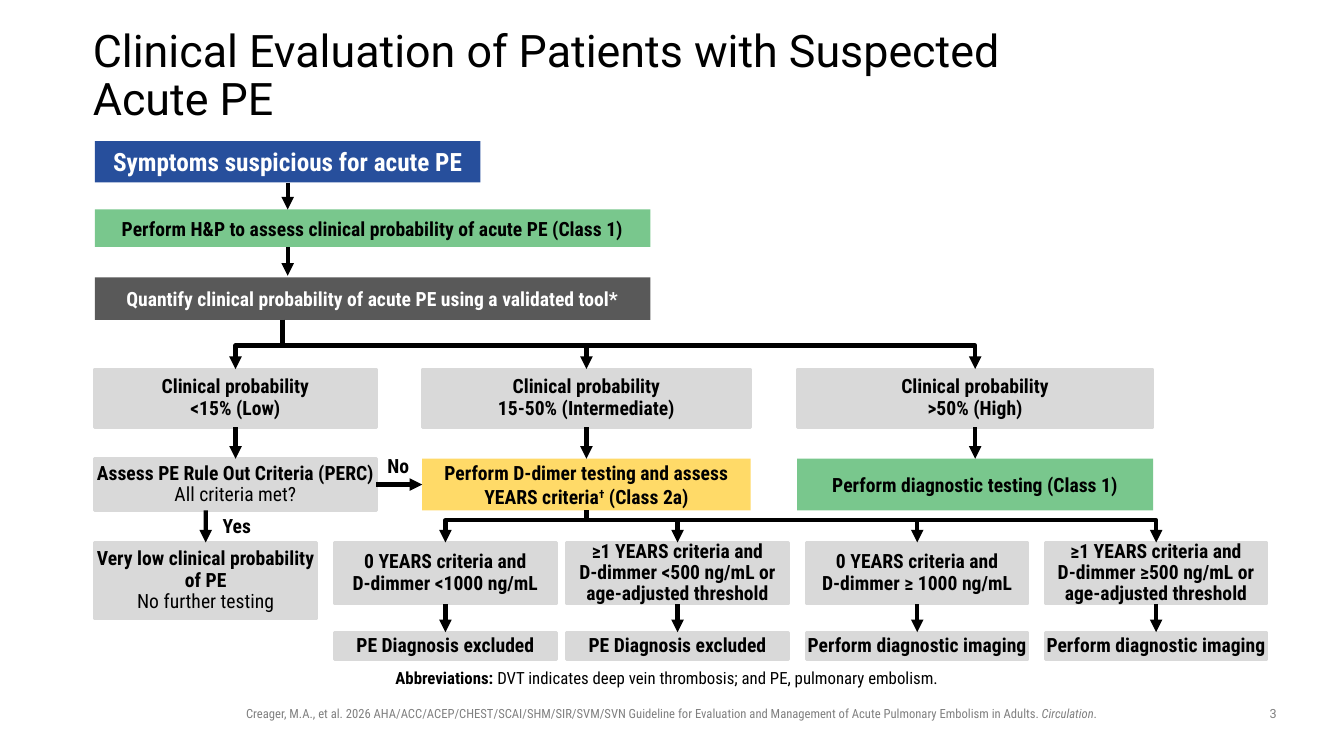
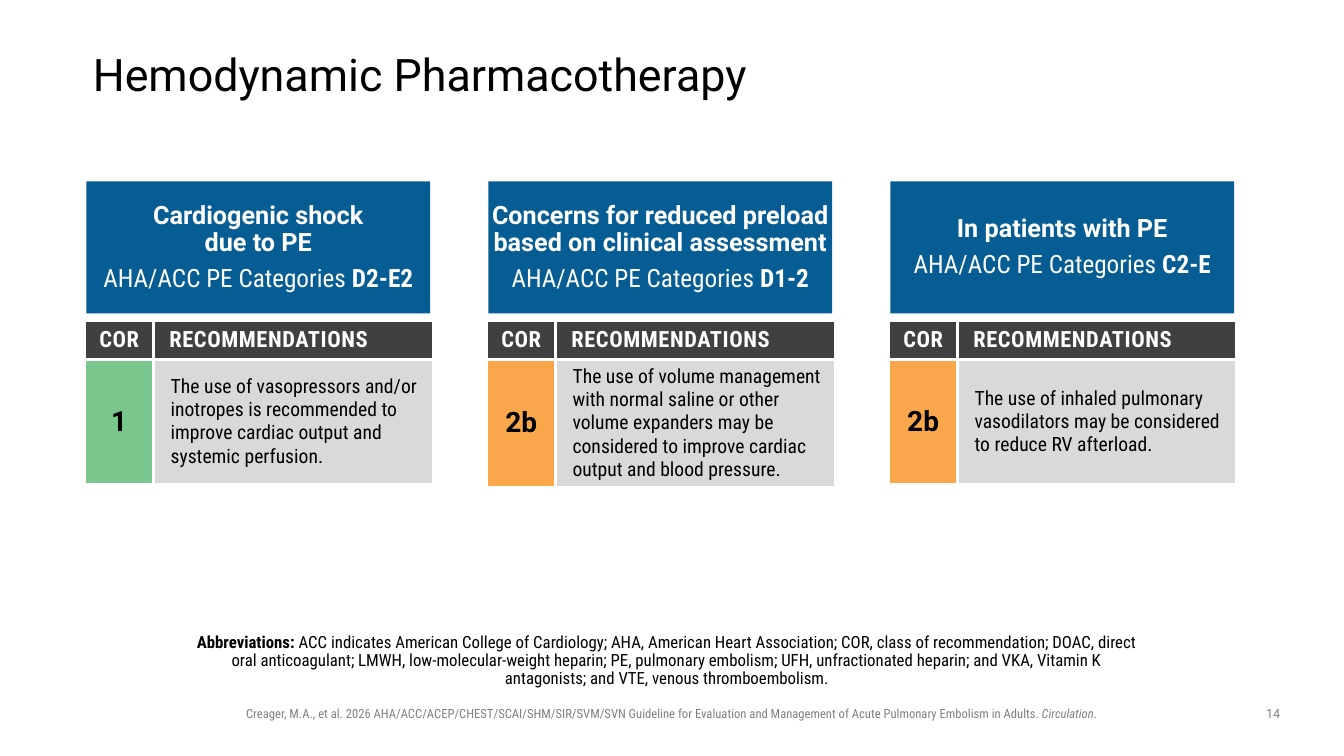
from lxml import etree
from pptx import Presentation
from pptx.dml.color import RGBColor
from pptx.enum.shapes import MSO_CONNECTOR, MSO_SHAPE
from pptx.enum.text import MSO_ANCHOR, PP_ALIGN
from pptx.oxml.ns import qn
from pptx.util import Cm, Pt

RECT = MSO_SHAPE.RECTANGLE
STRAIGHT, ELBOW = MSO_CONNECTOR.STRAIGHT, MSO_CONNECTOR.ELBOW
LEFT, CENTER = PP_ALIGN.LEFT, PP_ALIGN.CENTER
TOP, MIDDLE, BOTTOM = MSO_ANCHOR.TOP, MSO_ANCHOR.MIDDLE, MSO_ANCHOR.BOTTOM
SIDE_TOP, SIDE_LEFT, SIDE_BOTTOM, SIDE_RIGHT = range(4)

HEADING, BODY = "Roboto", "Roboto Condensed"
BLACK, WHITE, FOOTER_GRAY = "000000", "FFFFFF", "808080"
LIGHT_GRAY, DARK_GRAY, HEADER_GRAY = "D9D9D9", "595959", "404040"
ROYAL, BLUE = "274F9C", "065D93"
GREEN, YELLOW, ORANGE = "79C78D", "FFDA68", "FAA74B"

NO_INSETS = (0, 0, 0, 0)
BOX_INSETS = (0.25, 0.13, 0.25, 0.13)
CITATION = [
    ("Creager, M.A., et al. 2026 AHA/ACC/ACEP/CHEST/SCAI/SHM/SIR/SVM/SVN Guideline for "
     "Evaluation and Management of Acute Pulmonary Embolism in Adults. ", {}),
    ("Circulation", {"italic": True}),
    (".", {}),
]


def rgb(value):
    return RGBColor.from_string(value)


def center_x(shape):
    return (shape.left + shape.width / 2) / Cm(1)


class Deck:
    """Shared style plus the slide being built; lengths are in centimetres."""

    def __init__(self):
        self.prs = Presentation()
        self.prs.slide_width, self.prs.slide_height = Cm(33.87), Cm(19.05)
        self.slide = None

    def new_slide(self, title, title_width, number, abbreviations):
        self.slide = self.prs.slides.add_slide(self.prs.slide_layouts[6])
        self.text(2.34, 1.02, title_width, 1.83, [title], size=32, font=HEADING,
                  align=LEFT, spacing=0.9)
        self.text(4.78, 16.31, 24.31, 1.17,
                  [[("Abbreviations: ", {"bold": True}), (abbreviations, {})]],
                  insets=(0, 0.13, 0.25, 0.13), anchor=BOTTOM, size=12, spacing=0.9)
        self.text(5.66, 17.65, 22.53, 0.64, [CITATION], insets=BOX_INSETS, anchor=TOP,
                  size=9, color=FOOTER_GRAY)
        self.text(31.55, 17.65, 1.07, 0.66, [number], insets=BOX_INSETS, anchor=TOP,
                  size=9, font=HEADING, color=FOOTER_GRAY)

    # Text
    def set_paragraphs(self, frame, paragraphs, size=14, font=BODY, color=BLACK, bold=False,
                       align=CENTER, spacing=None, after=None, tracking=None):
        """Each paragraph is a string or a list of (text, run options)."""
        for index, content in enumerate(paragraphs):
            paragraph = frame.paragraphs[0] if index == 0 else frame.add_paragraph()
            paragraph.alignment = align
            if spacing:
                paragraph.line_spacing = spacing
            if after:
                paragraph.space_after = Pt(after)
            parts = [(content, {})] if isinstance(content, str) else content
            for text, options in parts:
                for line_index, line in enumerate(text.split("\n")):
                    if line_index:
                        paragraph.add_line_break()
                    run = paragraph.add_run()
                    run.text = line
                    run.font.size = Pt(size)
                    run.font.name = options.get("font", font)
                    run.font.bold = options.get("bold", bold)
                    run.font.italic = options.get("italic", False)
                    run.font.color.rgb = rgb(color)
                    if options.get("superscript"):
                        run.font._element.set("baseline", "30000")
                    if tracking:
                        run.font._element.set("spc", str(tracking))

    def fill_frame(self, shape, paragraphs, insets, anchor, style):
        frame = shape.text_frame
        frame.word_wrap = True
        frame.vertical_anchor = anchor
        (frame.margin_left, frame.margin_top,
         frame.margin_right, frame.margin_bottom) = (Cm(inset) for inset in insets)
        self.set_paragraphs(frame, paragraphs, **style)

    def text(self, x, y, w, h, paragraphs, insets=NO_INSETS, anchor=MIDDLE, **style):
        box = self.slide.shapes.add_textbox(Cm(x), Cm(y), Cm(w), Cm(h))
        self.fill_frame(box, paragraphs, insets, anchor, style)

    # Boxes
    def box(self, x, y, w, h, fill, paragraphs, outline=None, insets=BOX_INSETS,
            anchor=MIDDLE, **style):
        shape = self.slide.shapes.add_shape(RECT, Cm(x), Cm(y), Cm(w), Cm(h))
        shape.shadow.inherit = False
        shape.fill.solid()
        shape.fill.fore_color.rgb = rgb(fill)
        if outline:
            shape.line.color.rgb = rgb(outline)
            shape.line.width = Pt(2)
        else:
            shape.line.fill.background()
        self.fill_frame(shape, paragraphs, insets, anchor, {"bold": True, **style})
        return shape

    def card(self, x, y, w, h, paragraphs):
        return self.box(x, y, w, h, LIGHT_GRAY, paragraphs, outline=LIGHT_GRAY,
                        insets=NO_INSETS, spacing=0.9)

    # Arrows
    def connector(self, kind, x1, y1, x2, y2):
        line = self.slide.shapes.add_connector(kind, Cm(x1), Cm(y1), Cm(x2), Cm(y2))
        line.line.color.rgb = rgb(BLACK)
        line.line.width = Pt(3)
        properties = line._element.spPr
        etree.SubElement(properties.find(qn("a:ln")), qn("a:tailEnd"), type="triangle")
        etree.SubElement(properties, qn("a:effectLst"))
        return line

    def arrow(self, x1, y1, x2, y2, start=None, end=None):
        """Straight arrow; start and end are optional (shape, side) joints."""
        line = self.connector(STRAIGHT, x1, y1, x2, y2)
        if start:
            line.begin_connect(*start)
        if end:
            line.end_connect(*end)

    def link(self, start, end):
        self.arrow(0, 0, 0, 0, start, end)

    def branch(self, x1, y1, x2, y2, bend_y):
        """Arrow that runs down, across at bend_y, and down again."""
        drop, span = y2 - y1, abs(x2 - x1)
        left, top = (x1 + x2 - drop) / 2, (y1 + y2 - span) / 2
        right, bottom = left + drop, top + span
        if x2 < x1:
            line, rotation = self.connector(ELBOW, left, top, right, bottom), 90
        else:
            line, rotation = self.connector(ELBOW, right, top, left, bottom), 270
        properties = line._element.spPr
        properties.find(qn("a:xfrm")).set("rot", str(rotation * 60000))
        bend = round((bend_y - y1) / drop * 100000)
        etree.SubElement(properties.find(".//" + qn("a:avLst")), qn("a:gd"),
                         name="adj1", fmla=f"val {bend}")

    # Recommendation table
    def cell(self, cell, text, fill, margin_left, margin, **style):
        cell_properties = cell._tc.get_or_add_tcPr()
        for side in ("lnL", "lnR", "lnT", "lnB"):
            border = etree.SubElement(cell_properties, qn(f"a:{side}"), w=str(int(Pt(2.25))))
            solid = etree.SubElement(border, qn("a:solidFill"))
            etree.SubElement(solid, qn("a:srgbClr"), val=WHITE)
        cell.fill.solid()
        cell.fill.fore_color.rgb = rgb(fill)
        cell.vertical_anchor = MIDDLE
        cell.margin_left, cell.margin_right = Cm(margin_left), Cm(margin)
        cell.margin_top = cell.margin_bottom = Cm(0.13)
        self.set_paragraphs(cell.text_frame, [text], **style)

    def recommendation(self, x, y, class_name, class_color, advice):
        table = self.slide.shapes.add_table(2, 2, Cm(x), Cm(y), Cm(8.77), Cm(4.12)).table
        for column, width in zip(table.columns, (1.73, 7.04)):
            column.width = Cm(width)
        for row, height in zip(table.rows, (0.97, 3.15)):
            row.height = Cm(height)
        header = {"size": 16, "color": WHITE, "bold": True, "tracking": 45}
        self.cell(table.cell(0, 0), "COR", HEADER_GRAY, 0.25, 0.25, **header)
        self.cell(table.cell(0, 1), "RECOMMENDATIONS", HEADER_GRAY, 0.4, 0.25,
                  align=LEFT, **header)
        self.cell(table.cell(1, 0), class_name, class_color, 0.13, 0.13,
                  size=20, font=HEADING, bold=True)
        self.cell(table.cell(1, 1), advice, LIGHT_GRAY, 0.43, 0.13, align=LEFT)


def build_evaluation(deck):
    deck.new_slide("Clinical Evaluation of Patients with Suspected Acute PE", 24.94, "3",
                   "DVT indicates deep vein thrombosis; and PE, pulmonary embolism.")
    margin = 2.39

    # First steps
    symptoms = deck.box(margin, 3.56, 9.72, 1.04, ROYAL,
                        ["Symptoms suspicious for acute PE"], size=18, color=WHITE)
    deck.box(margin, 5.28, 14, 0.94, GREEN,
             ["Perform H&P to assess clinical probability of acute PE (Class 1)"])
    deck.box(margin, 6.99, 14, 1.07, DARK_GRAY,
             ["Quantify clinical probability of acute PE using a validated tool*"],
             color=WHITE)
    trunk_x = center_x(symptoms)
    deck.arrow(trunk_x, 4.6, trunk_x, 5.28, start=(symptoms, SIDE_BOTTOM))
    deck.arrow(trunk_x, 6.22, trunk_x, 6.95)

    # Probability levels and the action for each
    columns = [(margin, 7.09), (10.64, 8.28), (20.09, 8.97)]
    levels = ["<15% (Low)", "15-50% (Intermediate)", ">50% (High)"]
    probabilities = [deck.card(x, 9.3, w, 1.47, ["Clinical probability", level])
                     for (x, w), level in zip(columns, levels)]
    action_y, action_h = 11.56, 1.3
    (perc_x, perc_w), (dimer_x, dimer_w), (testing_x, testing_w) = columns
    perc = deck.card(perc_x, action_y, perc_w, action_h,
                     ["Assess PE Rule Out Criteria (PERC)",
                      [("All criteria met?", {"bold": False})]])
    dimer = deck.box(dimer_x, action_y, dimer_w, action_h, YELLOW,
                     [[("Perform D-dimer testing and assess YEARS criteria", {}),
                       ("†", {"superscript": True}), (" (Class 2a)", {})]])
    testing = deck.box(testing_x, action_y, testing_w, action_h, GREEN,
                       ["Perform diagnostic testing (Class 1)"])
    for probability, action in zip(probabilities, (perc, dimer, testing)):
        deck.branch(7.12, 8.06, center_x(probability), 9.3, 8.71)
        deck.link((probability, SIDE_BOTTOM), (action, SIDE_TOP))

    # PERC answers
    outcome_y, outcome_w = 13.67, 5.59
    very_low = deck.card(margin, outcome_y, outcome_w, 1.93,
                         ["Very low clinical probability of PE",
                          [("No further testing", {"bold": False})]])
    deck.arrow(center_x(very_low), action_y + action_h, center_x(very_low), outcome_y,
               end=(very_low, SIDE_TOP))
    deck.link((perc, SIDE_RIGHT), (dimer, SIDE_LEFT))
    for x, y, answer in [(9.53, 11.43, "No"), (5.46, 12.95, "Yes")]:
        deck.box(x, y, 1.02, 0.61, WHITE, [answer], insets=NO_INSETS, anchor=TOP)

    # D-dimer outcomes
    excluded, imaging = "PE Diagnosis excluded", "Perform diagnostic imaging"
    outcomes = [
        (8.43, "0 YEARS criteria and", "D-dimmer <1000 ng/mL", excluded),
        (14.28, "≥1 YEARS criteria and",
         "D-dimmer <500 ng/mL or age-adjusted threshold", excluded),
        (20.32, "0 YEARS criteria and", "D-dimmer ≥ 1000 ng/mL", imaging),
        (26.34, "≥1 YEARS criteria and",
         "D-dimmer ≥500 ng/mL or age-adjusted threshold", imaging),
    ]
    for x, criteria, level, conclusion in outcomes:
        outcome = deck.card(x, outcome_y, outcome_w, 1.55, [criteria, level])
        result = deck.card(x, 15.93, outcome_w, 0.69, [conclusion])
        deck.branch(center_x(dimer), action_y + action_h, center_x(outcome), outcome_y, 13.11)
        deck.link((outcome, SIDE_BOTTOM), (result, SIDE_TOP))


def build_pharmacotherapy(deck):
    deck.new_slide(
        "Hemodynamic Pharmacotherapy", 29.21, "14",
        "ACC indicates American College of Cardiology; AHA, American Heart Association; "
        "COR, class of recommendation; DOAC, direct oral anticoagulant; LMWH, "
        "low-molecular-weight heparin; PE, pulmonary embolism; UFH, unfractionated heparin; "
        "and VKA, Vitamin K antagonists; and VTE, venous thromboembolism.")
    situations = [
        ("Cardiogenic shock\ndue to PE", "D2-E2", "1", GREEN,
         "The use of vasopressors and/or inotropes is recommended to improve cardiac "
         "output and systemic perfusion."),
        ("Concerns for reduced preload based on clinical assessment", "D1-2", "2b", ORANGE,
         "The use of volume management with normal saline or other volume expanders may be "
         "considered to improve cardiac output and blood pressure."),
        ("In patients with PE", "C2-E", "2b", ORANGE,
         "The use of inhaled pulmonary vasodilators may be considered to reduce RV "
         "afterload."),
    ]
    for index, (situation, category, class_name, color, advice) in enumerate(situations):
        x = 2.18 + index * 10.13
        deck.box(x, 4.57, 8.66, 3.33, BLUE,
                 [situation, [("AHA/ACC PE Categories ", {"font": BODY, "bold": False}),
                              (category, {"font": BODY})]],
                 insets=NO_INSETS, size=18, font=HEADING, color=WHITE, spacing=0.9, after=6)
        deck.recommendation(x - 0.04, 8.08, class_name, color, advice)


def main():
    deck = Deck()
    build_evaluation(deck)
    build_pharmacotherapy(deck)
    deck.prs.save("out.pptx")


if __name__ == "__main__":
    main()
